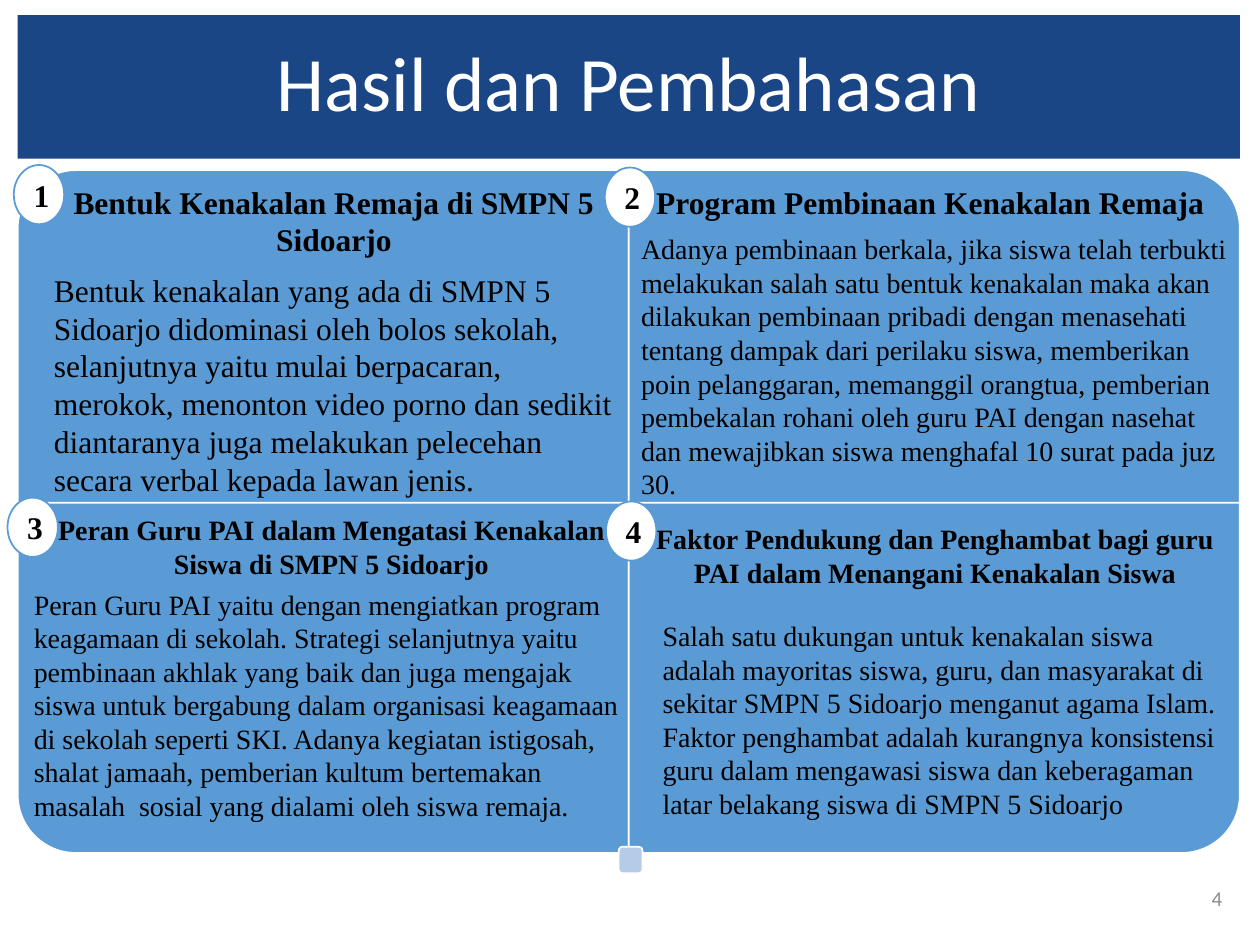
from pptx import Presentation
from pptx.dml.color import RGBColor
from pptx.enum.shapes import MSO_SHAPE
from pptx.enum.text import MSO_ANCHOR, PP_ALIGN
from pptx.util import Inches, Pt

LEFT, CENTER, RIGHT = PP_ALIGN.LEFT, PP_ALIGN.CENTER, PP_ALIGN.RIGHT
TOP, MIDDLE = MSO_ANCHOR.TOP, MSO_ANCHOR.MIDDLE
QUARTER, OVAL = MSO_SHAPE.ROUND_1_RECTANGLE, MSO_SHAPE.OVAL
ROUNDED = MSO_SHAPE.ROUNDED_RECTANGLE

COLORS = {"navy": "1B4685", "blue": "5B9BD5", "pale": "B5CBE7",
          "white": "FFFFFF", "black": "000000", "gray": "8C8C8C"}
SERIF, SANS = "Times New Roman", "Calibri"

TITLE = "Hasil dan Pembahasan"
PAGE = "4"

# Boxes are (left, top, width, height) in inches; sizes are in points.
TOPICS = [
    {"heading": "Bentuk Kenakalan Remaja di SMPN 5 Sidoarjo",
     "heading_box": (0.4, 1.4, 4.5, 0.71), "heading_size": 18, "align": CENTER,
     "body": "Bentuk kenakalan yang ada di SMPN 5 Sidoarjo didominasi oleh bolos "
             "sekolah, selanjutnya yaitu mulai berpacaran, merokok, menonton video "
             "porno dan sedikit diantaranya juga melakukan pelecehan secara verbal "
             "kepada lawan jenis.",
     "body_box": (0.33, 2.1, 4.65, 1.92), "body_size": 18,
     "badge": (0.11, 1.31), "rotation": 270},
    {"heading": "Program Pembinaan Kenakalan Remaja",
     "heading_box": (5.11, 1.4, 5.71, 0.71), "heading_size": 18, "align": LEFT,
     "body": "Adanya pembinaan berkala, jika siswa telah terbukti melakukan salah "
             "satu bentuk kenakalan maka akan dilakukan pembinaan pribadi dengan "
             "menasehati tentang dampak dari perilaku siswa, memberikan poin "
             "pelanggaran, memanggil orangtua, pemberian pembekalan rohani oleh guru "
             "PAI dengan nasehat dan mewajibkan siswa menghafal 10 surat pada juz 30.",
     "body_box": (4.99, 1.79, 4.87, 2.26), "body_size": 16,
     "badge": (4.8, 1.33), "rotation": 0},
    {"heading": "Peran Guru PAI dalam Mengatasi Kenakalan Siswa di SMPN 5 Sidoarjo",
     "heading_box": (0.29, 4.02, 4.68, 0.84), "heading_size": 16, "align": CENTER,
     "body": "Peran Guru PAI yaitu dengan mengiatkan program keagamaan di sekolah. "
             "Strategi selanjutnya yaitu pembinaan akhlak yang baik dan juga mengajak "
             "siswa untuk bergabung dalam organisasi keagamaan di sekolah seperti SKI. "
             "Adanya kegiatan istigosah, shalat jamaah, pemberian kultum bertemakan "
             "masalah  sosial yang dialami oleh siswa remaja.",
     "body_box": (0.17, 4.61, 4.97, 1.99), "body_size": 16,
     "badge": (0.06, 3.95), "rotation": 180},
    {"heading": "Faktor Pendukung dan Penghambat bagi guru PAI dalam Menangani "
                "Kenakalan Siswa",
     "heading_box": (5.08, 4.09, 4.68, 0.88), "heading_size": 16, "align": CENTER,
     "body": "Salah satu dukungan untuk kenakalan siswa adalah mayoritas siswa, guru, "
             "dan masyarakat di sekitar SMPN 5 Sidoarjo menganut agama Islam. Faktor "
             "penghambat adalah kurangnya konsistensi guru dalam mengawasi siswa dan "
             "keberagaman latar belakang siswa di SMPN 5 Sidoarjo",
     "body_box": (5.16, 4.86, 4.68, 1.72), "body_size": 16,
     "badge": (4.81, 3.98), "rotation": 90},
]

GRID_LEFT, GRID_TOP = 0.14, 1.35
PANEL_W, PANEL_H, ROW_STEP = 4.85, 2.78, 2.64
BADGE_W, BADGE_H = 0.4, 0.47


def color(name):
    return RGBColor.from_string(COLORS[name])


def set_text(shape, text, size, font=SERIF, ink="black", bold=False,
             align=LEFT, anchor=TOP):
    tf = shape.text_frame
    tf.word_wrap = True
    tf.vertical_anchor = anchor
    p = tf.paragraphs[0]
    p.text = text
    p.alignment = align
    p.font.size = Pt(size)
    p.font.name = font
    p.font.bold = bold
    p.font.color.rgb = color(ink)
    return p


def add_text(s, box, text, size, **style):
    set_text(s.shapes.add_textbox(*map(Inches, box)), text, size, **style)


def add_box(s, kind, box, fill, line):
    sp = s.shapes.add_shape(kind, *map(Inches, box))
    sp.shadow.inherit = False
    sp.fill.solid()
    sp.fill.fore_color.rgb = color(fill)
    sp.line.color.rgb = color(line)
    sp.line.width = Pt(1)
    return sp


def add_panel(s, index, rotation):
    """Add a grid panel, turned so that its round corner points outwards."""
    row, col = divmod(index, 2)
    left, top = GRID_LEFT + col * PANEL_W, GRID_TOP + row * ROW_STEP
    w, h = PANEL_W, PANEL_H
    if rotation % 180:
        left, top = left + (w - h) / 2, top + (h - w) / 2
        w, h = h, w
    add_box(s, QUARTER, (left, top, w, h), "blue", "white").rotation = rotation


def main():
    prs = Presentation()
    prs.slide_width, prs.slide_height = Inches(10), Inches(7.5)
    s = prs.slides.add_slide(prs.slide_layouts[5])

    title = s.shapes.title
    title.left, title.top = Inches(0.14), Inches(0.12)
    title.width, title.height = Inches(9.7), Inches(1.14)
    title.fill.solid()
    title.fill.fore_color.rgb = color("navy")
    p = set_text(title, TITLE, 44, font=SANS, ink="white", align=CENTER, anchor=MIDDLE)
    p.line_spacing = 0.9

    for i, topic in enumerate(TOPICS):
        add_panel(s, i, topic["rotation"])
    add_box(s, ROUNDED, (4.91, 6.72, 0.19, 0.21), "pale", "white")

    for i, topic in enumerate(TOPICS, 1):
        add_text(s, topic["body_box"], topic["body"], topic["body_size"])
        add_text(s, topic["heading_box"], topic["heading"], topic["heading_size"],
                 bold=True, align=topic["align"])
        badge = add_box(s, OVAL, (*topic["badge"], BADGE_W, BADGE_H), "white", "blue")
        set_text(badge, str(i), 18, bold=True, align=CENTER, anchor=MIDDLE)

    add_text(s, (9.37, 6.93, 0.43, 0.4), PAGE, 12, font=SANS, ink="gray",
             align=RIGHT, anchor=MIDDLE)
    prs.save("out.pptx")


if __name__ == "__main__":
    main()
